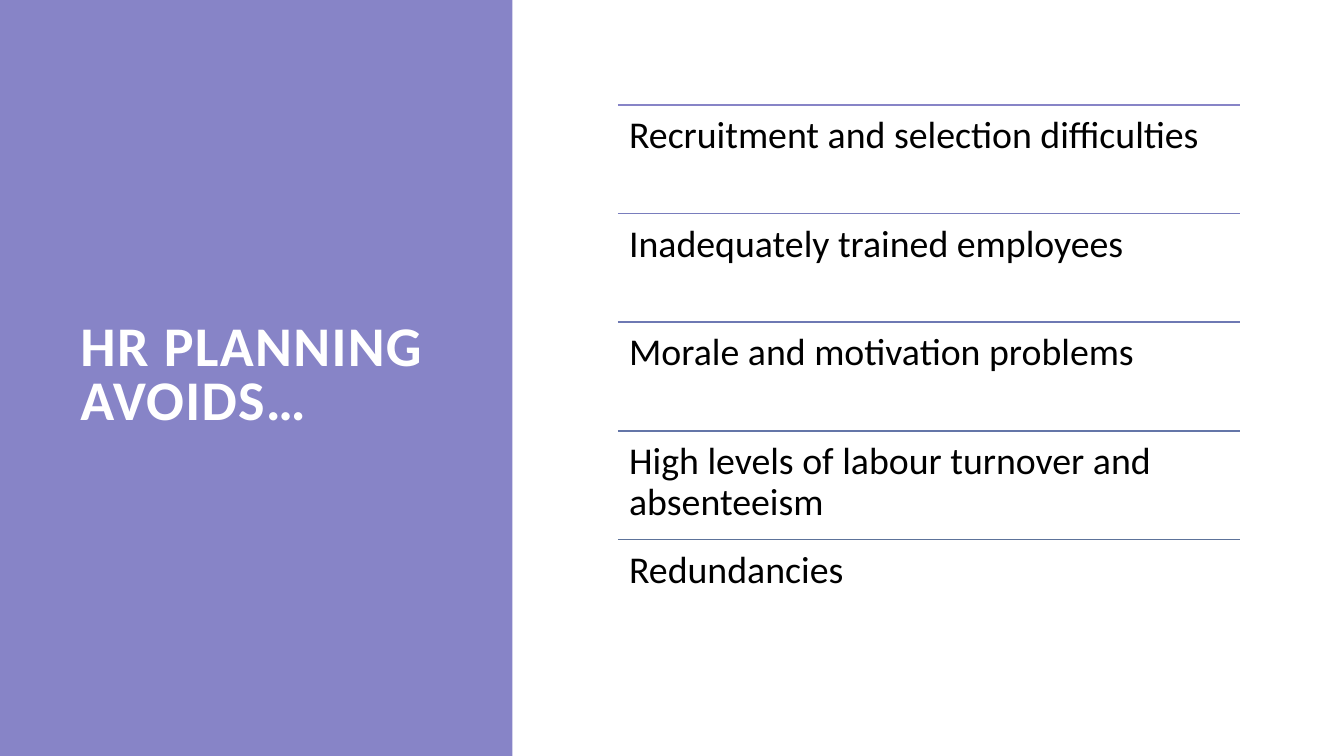
"""Build the slide on what HR planning avoids."""
import pptx
import pptx.dml.color
import pptx.enum.shapes
import pptx.enum.text
import pptx.util
from lxml import etree

Pt = pptx.util.Pt

TITLE = "HR PLANNING AVOIDS…"
ITEMS = [
    ("Recruitment and selection difficulties", "8784C7"),
    ("Inadequately trained employees", "797DBD"),
    ("Morale and motivation problems", "6E79B3"),
    ("High levels of labour turnover and absenteeism", "6476A8"),
    ("Redundancies", "5D739A"),
]
SLIDE_W, SLIDE_H = 960, 540
PANEL_W, PANEL_COLOR = 366, "8784C7"
TITLE_BOX = (50.4, 50.4, 269.3, 438.5)
LIST_X, LIST_Y, LIST_W, ROW_H = 441.4, 74.9, 444.2, 77.6
TITLE_FONT = {"name": "Calibri", "size": Pt(40), "bold": True}
ITEM_FONT = {"name": "Calibri", "size": Pt(27), "bold": False}


def rgb(value):
    return pptx.dml.color.RGBColor.from_string(value)


def add_text(s, box, text, font, color, frame, para):
    sp = s.shapes.add_textbox(*map(Pt, box))
    tf = sp.text_frame
    p = tf.paragraphs[0]
    r = p.add_run()
    r.text = text
    r.font.color.rgb = rgb(color)
    for target, values in ((tf, frame), (p, para), (r.font, font)):
        for name, value in values.items():
            setattr(target, name, value)
    return r


def add_rule(s, x, y, w, color):
    line = s.shapes.add_connector(
        pptx.enum.shapes.MSO_CONNECTOR.STRAIGHT, Pt(x), Pt(y), Pt(x + w), Pt(y))
    line.line.color.rgb = rgb(color)
    line.line.width = Pt(1.25)
    etree.SubElement(line._element.spPr, pptx.oxml.ns.qn("a:effectLst"))


def main():
    prs = pptx.Presentation()
    prs.slide_width, prs.slide_height = Pt(SLIDE_W), Pt(SLIDE_H)
    s = prs.slides.add_slide(prs.slide_layouts[6])

    panel = s.shapes.add_shape(
        pptx.enum.shapes.MSO_SHAPE.RECTANGLE, 0, 0, Pt(PANEL_W), Pt(SLIDE_H))
    panel.shadow.inherit = False
    panel.fill.solid()
    panel.fill.fore_color.rgb = rgb(PANEL_COLOR)
    panel.line.fill.background()

    title_frame = {"word_wrap": True,
                   "vertical_anchor": pptx.enum.text.MSO_ANCHOR.MIDDLE}
    r = add_text(s, TITLE_BOX, TITLE, TITLE_FONT, "FFFFFF",
                 title_frame, {"line_spacing": 0.8})
    r.font._element.set("spc", "100")

    item_frame = {"word_wrap": True}
    for side in ("left", "top", "right", "bottom"):
        item_frame["margin_" + side] = Pt(8)
    for i, (text, color) in enumerate(ITEMS):
        y = LIST_Y + i * ROW_H
        add_rule(s, LIST_X, y, LIST_W, color)
        add_text(s, (LIST_X, y, LIST_W, ROW_H), text, ITEM_FONT, "000000",
                 item_frame, {"line_spacing": 0.9})

    prs.save("out.pptx")


if __name__ == "__main__":
    main()
